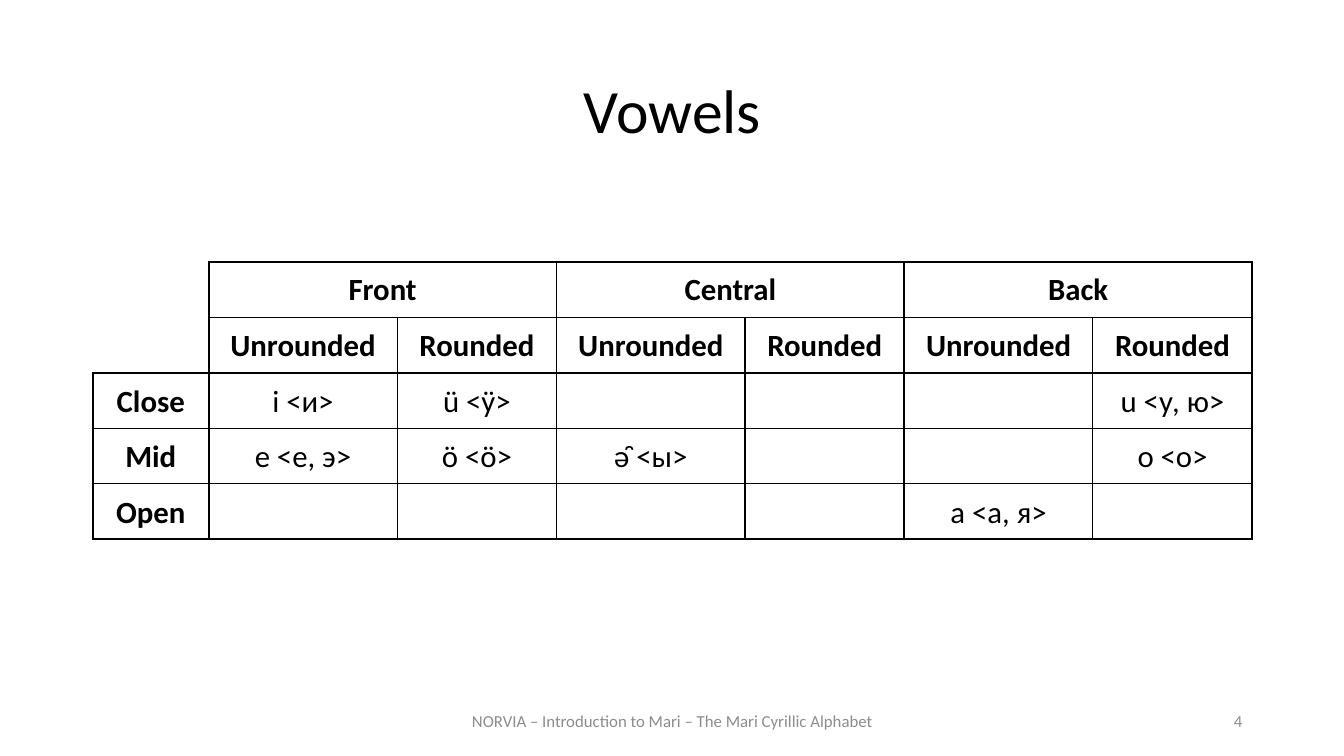
from lxml.etree import SubElement
from pptx import Presentation
from pptx.dml.color import RGBColor
from pptx.enum.text import MSO_ANCHOR, PP_ALIGN
from pptx.oxml.ns import qn
from pptx.util import Inches, Pt

TITLE = "Vowels"
FOOTER = "NORVIA – Introduction to Mari – The Mari Cyrillic Alphabet"
PAGE = "4"
BACKNESS = ["Front", "Central", "Back"]
ROUNDING = ["Unrounded", "Rounded"]
VOWELS = {
    "Close": ["i <и>", "ü <ӱ>", "", "", "", "u <у, ю>"],
    "Mid": ["е <е, э>", "ö <ӧ>", "ə̑ <ы>", "", "", "o <о>"],
    "Open": ["", "", "", "", "a <а, я>", ""],
}

THEME = {
    "font": "Calibri", "ink": "000000", "muted": "8C8C8C",
    "title": 44, "body": 22, "footer": 12,
    "thin": 1, "thick": 1.5,
}
NO_STYLE = "{2D5ABB26-0587-4C30-8999-92F81FD0307C}"

LEFT, WIDTH = 0.92, 11.5
TABLE_TOP, ROW_HEIGHT = 2.6, 0.55
LABEL_WIDTH = 1.15
ROUNDING_WIDTHS = [1.87, 1.58]
FOOTER_TOP, FOOTER_HEIGHT = 6.95, 0.4

HEADER_ROWS = 2
COLUMN_WIDTHS = [LABEL_WIDTH] + ROUNDING_WIDTHS * len(BACKNESS)
ROWS, COLUMNS = HEADER_ROWS + len(VOWELS), len(COLUMN_WIDTHS)
THICK_ROW_EDGES = {0, HEADER_ROWS, ROWS}
THICK_COLUMN_EDGES = {0, *range(1, COLUMNS + 1, len(ROUNDING))}


def write(frame, text, size, color, align, bold=False):
    frame.word_wrap = True
    paragraph = frame.paragraphs[0]
    paragraph.alignment = align
    run = paragraph.add_run()
    run.text = text
    run.font.name = THEME["font"]
    run.font.size = Pt(THEME[size])
    run.font.bold = bold
    run.font.color.rgb = RGBColor.from_string(THEME[color])
    return paragraph


def add_text(slide, box, text, size, color, align):
    frame = slide.shapes.add_textbox(*map(Inches, box)).text_frame
    frame.vertical_anchor = MSO_ANCHOR.MIDDLE
    return write(frame, text, size, color, align)


def draw_borders(cell, row, column):
    """Thick lines frame each vowel group; the corner has no outer lines."""
    bottom, right = row + cell.span_height, column + cell.span_width
    if not cell.is_merge_origin:
        bottom, right = row + 1, column + 1
    edges = [
        ("L", column in THICK_COLUMN_EDGES), ("R", right in THICK_COLUMN_EDGES),
        ("T", row in THICK_ROW_EDGES), ("B", bottom in THICK_ROW_EDGES),
    ]
    properties = cell._tc.get_or_add_tcPr()
    for side, thick in edges:
        if row == column == 0 and side in "LT":
            continue
        width = Pt(THEME["thick" if thick else "thin"])
        line = SubElement(properties, qn(f"a:ln{side}"), w=str(width))
        fill = SubElement(line, qn("a:solidFill"))
        SubElement(fill, qn("a:srgbClr"), val=THEME["ink"])


def fill_cell(cell, text, bold, margins):
    cell.vertical_anchor = MSO_ANCHOR.MIDDLE
    (cell.margin_left, cell.margin_top,
     cell.margin_right, cell.margin_bottom) = map(Inches, margins)
    if text:
        write(cell.text_frame, text, "body", "ink", PP_ALIGN.CENTER, bold)


def add_vowel_table(slide):
    table = slide.shapes.add_table(
        ROWS, COLUMNS, Inches(LEFT), Inches(TABLE_TOP),
        Inches(WIDTH), Inches(ROW_HEIGHT * ROWS)).table
    table.first_row = table.horz_banding = False
    table._tbl.tblPr.find(qn("a:tableStyleId")).text = NO_STYLE
    for column, width in zip(table.columns, COLUMN_WIDTHS):
        column.width = Inches(width)
    for row in table.rows:
        row.height = Inches(ROW_HEIGHT)

    table.cell(0, 0).merge(table.cell(HEADER_ROWS - 1, 0))
    groups = [""]
    for backness in BACKNESS:
        first = len(groups)
        groups += [backness] + [""] * (len(ROUNDING) - 1)
        table.cell(0, first).merge(table.cell(0, len(groups) - 1))

    grid = [groups, [""] + ROUNDING * len(BACKNESS)]
    grid += [[height] + vowels for height, vowels in VOWELS.items()]
    for r, texts in enumerate(grid):
        for c, text in enumerate(texts):
            cell = table.cell(r, c)
            if cell.is_spanned:
                continue
            margins = (0.18, 0.09, 0.18, 0.09) if r == 0 else (0.13, 0.02, 0.13, 0)
            fill_cell(cell, text, r < HEADER_ROWS or c == 0, margins)
            draw_borders(cell, r, c)
            cell.fill.background()


def main():
    deck = Presentation()
    deck.slide_width, deck.slide_height = Inches(13.33), Inches(7.5)
    slide = deck.slides.add_slide(deck.slide_layouts[6])
    title = add_text(slide, (LEFT, 0.4, WIDTH, 1.45), TITLE,
                     "title", "ink", PP_ALIGN.CENTER)
    title.line_spacing = 0.9
    add_vowel_table(slide)
    add_text(slide, (4.42, FOOTER_TOP, 4.5, FOOTER_HEIGHT), FOOTER,
             "footer", "muted", PP_ALIGN.CENTER)
    add_text(slide, (9.42, FOOTER_TOP, 3, FOOTER_HEIGHT), PAGE,
             "footer", "muted", PP_ALIGN.RIGHT)
    deck.save("out.pptx")


if __name__ == "__main__":
    main()
